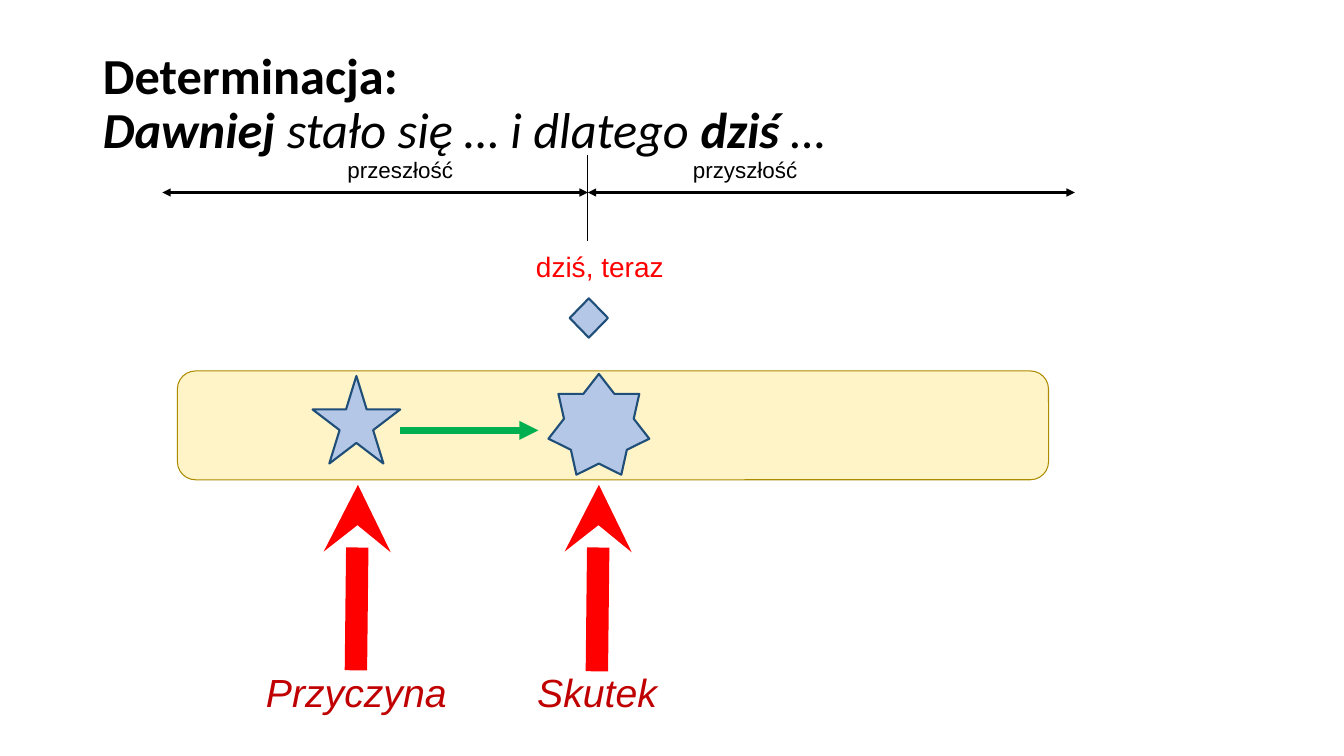
from dataclasses import dataclass

from lxml import etree
from pptx import Presentation
from pptx.dml.color import RGBColor
from pptx.enum.shapes import MSO_CONNECTOR, MSO_SHAPE
from pptx.enum.text import MSO_ANCHOR, MSO_AUTO_SIZE, PP_ALIGN
from pptx.oxml.ns import qn
from pptx.util import Inches, Pt

STRAIGHT = MSO_CONNECTOR.STRAIGHT
ROUNDED, DIAMOND = MSO_SHAPE.ROUNDED_RECTANGLE, MSO_SHAPE.DIAMOND
STAR_5, STAR_7 = MSO_SHAPE.STAR_5_POINT, MSO_SHAPE.STAR_7_POINT
LEFT, CENTER = PP_ALIGN.LEFT, PP_ALIGN.CENTER
TOP, MIDDLE = MSO_ANCHOR.TOP, MSO_ANCHOR.MIDDLE
TITLE_ONLY = 5


@dataclass(frozen=True)
class Theme:
    title_font: str = "Calibri"
    body_font: str = "Arial"
    title_size: int = 36
    effect_size: int = 28
    now_size: int = 20
    axis_size: int = 16
    black: str = "000000"
    red: str = "FF0000"
    dark_red: str = "C00000"
    green: str = "00B050"
    band: str = "FFF4C7"
    band_edge: str = "AD8B00"
    event: str = "B4C7E7"
    event_edge: str = "1F4E79"


THEME = Theme()
NOW_X, AXIS_Y = 5.83, 1.91

# Title lines made of (text, bold, italic)
TITLE_LINES = [
    [("Determinacja:", True, False)],
    [("Dawniej", True, True), (" stało się … i dlatego ", False, True),
     ("dziś ", True, True), ("…", False, True)],
]
TITLE_BOX = (0.92, 0.4, 11.5, 1.29)

# kind, (left, top, width, height), fill, edge, edge width
SHAPES = [
    (ROUNDED, (1.76, 3.68, 8.64, 1.08), THEME.band, THEME.band_edge, 0.75),
    (STAR_5, (3.1, 3.73, 0.87, 0.87), THEME.event, THEME.event_edge, 1.5),
    (STAR_7, (5.44, 3.71, 1, 1), THEME.event, THEME.event_edge, 1.5),
    (DIAMOND, (5.65, 2.96, 0.38, 0.39), THEME.event, THEME.event_edge, 1.5),
]

# start, end, colour, width, arrowhead at start, arrowhead at end
LINES = [
    ((3.97, 4.27), (5.34, 4.27), THEME.green, 4.5, None, "triangle"),
    ((3.53, 6.65), (3.55, 4.81), THEME.red, 16, None, "stealth"),
    ((5.92, 6.66), (5.94, 4.81), THEME.red, 16, None, "stealth"),
    ((1.61, AXIS_Y), (NOW_X, AXIS_Y), THEME.black, 1.5, "triangle", "triangle"),
    ((NOW_X, 1.54), (NOW_X, 2.39), THEME.black, 0.5, None, None),
    ((NOW_X, AXIS_Y), (10.66, AXIS_Y), THEME.black, 1.5, "triangle", "triangle"),
]

# text, (left, top, width, height), size, colour
CAUSAL_LABELS = [
    ("Przyczyna", (2.54, 6.58, 2.16, 0.57), THEME.effect_size, THEME.dark_red),
    ("Skutek", (5.23, 6.58, 2.16, 0.57), THEME.effect_size, THEME.dark_red),
]
TIME_LABELS = [
    ("dziś, teraz", (5.23, 2.44, 1.44, 0.4), THEME.now_size, THEME.red),
    ("przeszłość", (3.25, 1.51, 1.44, 0.35), THEME.axis_size, THEME.black),
    ("przyszłość", (6.67, 1.52, 1.44, 0.33), THEME.axis_size, THEME.black),
]


def inches(values):
    return [Inches(value) for value in values]


def style_span(span, font, size, color, bold=False, italic=False):
    span.font.name = font
    span.font.size = Pt(size)
    span.font.color.rgb = RGBColor.from_string(color)
    span.font.bold = bold
    span.font.italic = italic


def fill_title(page):
    title = page.shapes.title
    title.left, title.top, title.width, title.height = inches(TITLE_BOX)
    frame = title.text_frame
    frame.vertical_anchor = MIDDLE
    frame.word_wrap = True
    frame.auto_size = MSO_AUTO_SIZE.NONE
    para = frame.paragraphs[0]
    para.alignment = LEFT
    para.line_spacing = 0.9
    for index, line in enumerate(TITLE_LINES):
        if index:
            para.add_line_break()
        for text, bold, italic in line:
            span = para.add_run()
            span.text = text
            style_span(span, THEME.title_font, THEME.title_size, THEME.black,
                       bold, italic)


def add_figure(page, kind, box, fill, edge, width):
    figure = page.shapes.add_shape(kind, *inches(box))
    figure.shadow.inherit = False
    figure.fill.solid()
    figure.fill.fore_color.rgb = RGBColor.from_string(fill)
    figure.line.color.rgb = RGBColor.from_string(edge)
    figure.line.width = Pt(width)


def add_line(page, start, end, color, width, head, tail):
    connector = page.shapes.add_connector(STRAIGHT, *inches(start + end))
    connector.line.color.rgb = RGBColor.from_string(color)
    connector.line.width = Pt(width)
    properties = connector.element.spPr
    outline = properties.find(qn("a:ln"))
    for tag, arrow in (("a:headEnd", head), ("a:tailEnd", tail)):
        if arrow:
            etree.SubElement(outline, qn(tag), type=arrow)
    etree.SubElement(properties, qn("a:effectLst"))


def add_label(page, text, box, size, color, italic, align, anchor, inset=None):
    label = page.shapes.add_textbox(*inches(box))
    frame = label.text_frame
    frame.word_wrap = True
    frame.auto_size = MSO_AUTO_SIZE.SHAPE_TO_FIT_TEXT
    frame.vertical_anchor = anchor
    if inset is not None:
        frame.margin_left = frame.margin_right = Inches(inset)
        frame.margin_top = frame.margin_bottom = Inches(inset)
    frame.text = text
    para = frame.paragraphs[0]
    para.alignment = align
    style_span(para.runs[0], THEME.body_font, size, color, italic=italic)


def main():
    deck = Presentation()
    deck.slide_width, deck.slide_height = Inches(13.33), Inches(7.5)
    page = deck.slides.add_slide(deck.slide_layouts[TITLE_ONLY])
    fill_title(page)
    for figure in SHAPES:
        add_figure(page, *figure)
    for line in LINES:
        add_line(page, *line)
    for label in CAUSAL_LABELS:
        add_label(page, *label, italic=True, align=LEFT, anchor=TOP)
    for label in TIME_LABELS:
        add_label(page, *label, italic=False, align=CENTER, anchor=MIDDLE,
                  inset=0.03)
    deck.save("out.pptx")


if __name__ == "__main__":
    main()
